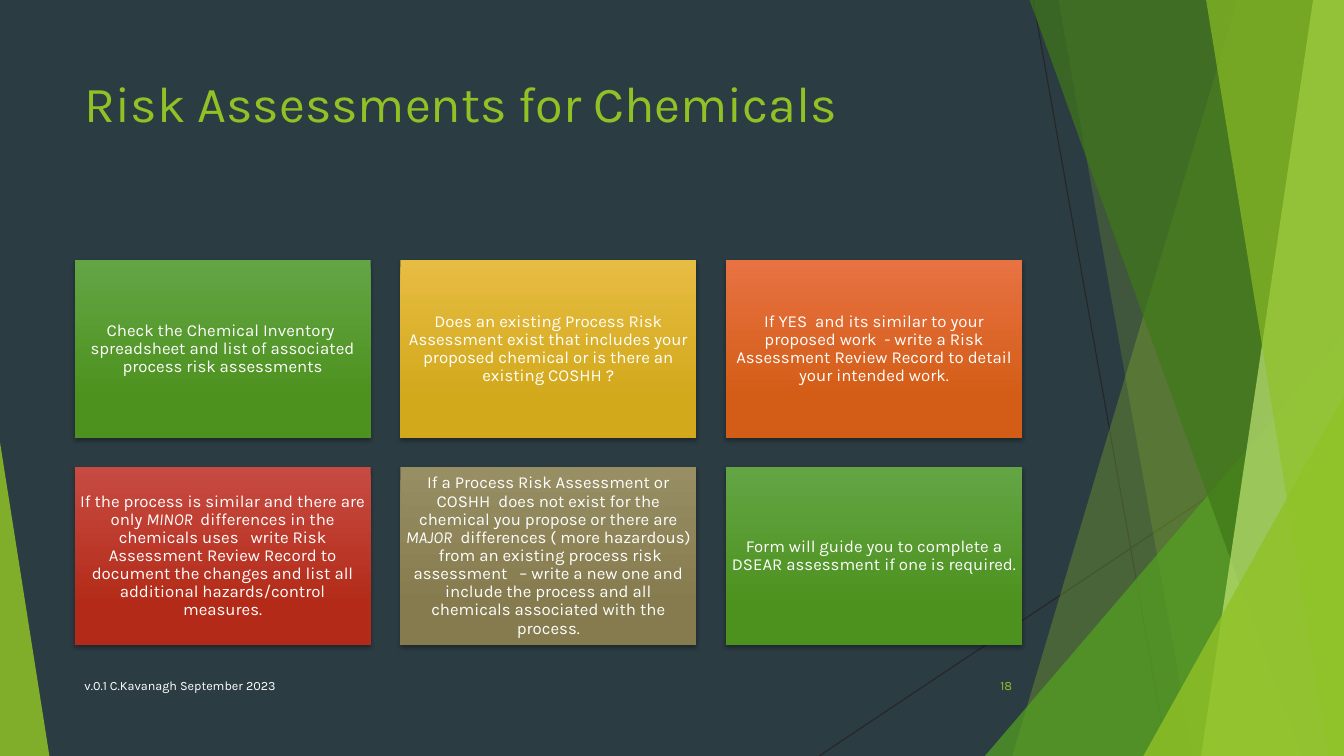
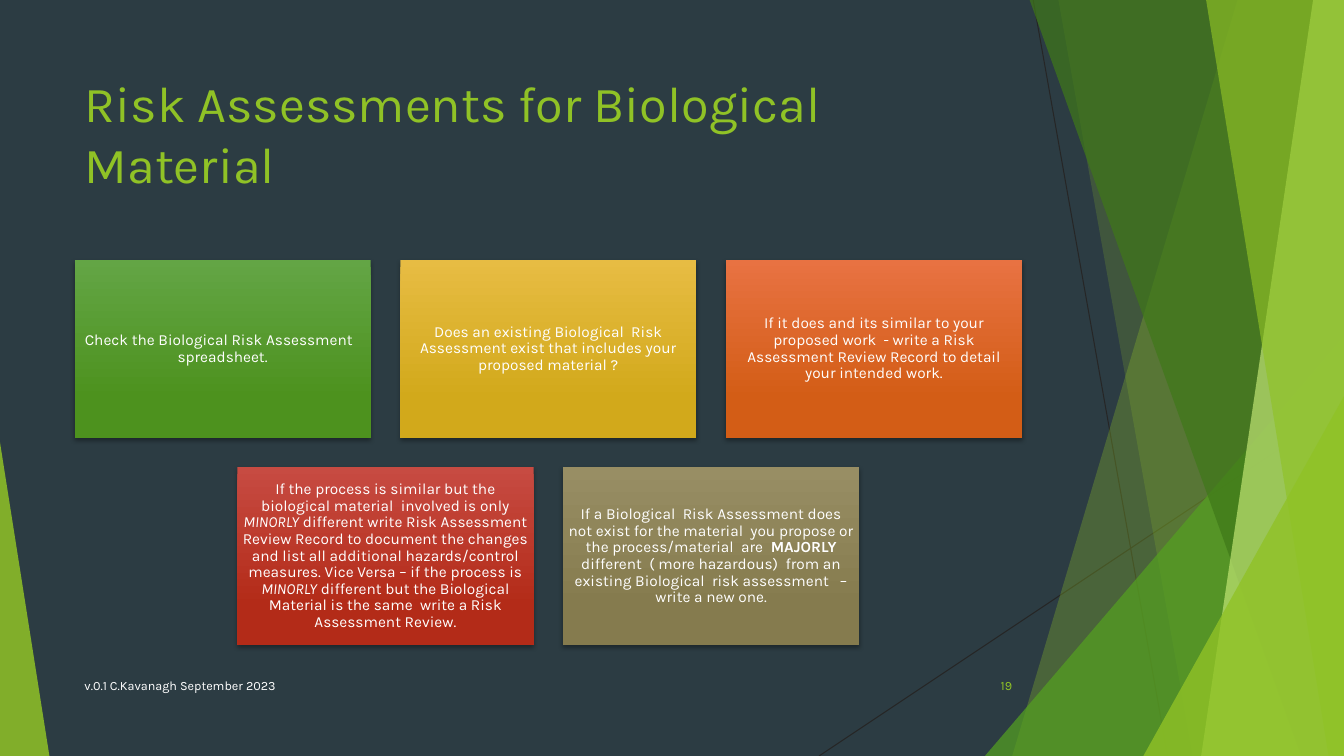
from dataclasses import dataclass

from lxml import etree
from pptx import Presentation
from pptx.dml.color import RGBColor
from pptx.enum.shapes import MSO_CONNECTOR, MSO_SHAPE
from pptx.enum.text import MSO_ANCHOR, MSO_AUTO_SIZE, PP_ALIGN
from pptx.oxml.ns import qn
from pptx.util import Pt

STRAIGHT = MSO_CONNECTOR.STRAIGHT
RECT = MSO_SHAPE.RECTANGLE
TRIANGLE = MSO_SHAPE.ISOSCELES_TRIANGLE
TOP, MIDDLE = MSO_ANCHOR.TOP, MSO_ANCHOR.MIDDLE
LEFT, CENTER, RIGHT = PP_ALIGN.LEFT, PP_ALIGN.CENTER, PP_ALIGN.RIGHT
NO_FIT = MSO_AUTO_SIZE.NONE
TITLE_ONLY = 5
W, H = 960, 540


@dataclass(frozen=True)
class Theme:
    font: str = "Karla"
    background: str = "2C3C43"
    accent: str = "90C226"
    text: str = "FFFFFF"
    hairline: str = "262626"
    green: str = "54A021"
    dark_green: str = "3F7819"
    pale_green: str = "C0E474"
    shadow: str = "000000"
    title_size: float = 36
    footer_size: float = 9
    cards: tuple[tuple[str, str], ...] = (
        ("63A545", "4D921E"),
        ("E7BC43", "D2A91B"),
        ("E87242", "D35D16"),
        ("C74B42", "B32B18"),
        ("988E64", "857B4E"),
    )


THEME = Theme()


@dataclass(frozen=True)
class Box:
    x: float
    y: float
    w: float
    h: float

    def emu(self) -> tuple[Pt, Pt, Pt, Pt]:
        return Pt(self.x), Pt(self.y), Pt(self.w), Pt(self.h)


@dataclass(frozen=True)
class Run:
    text: str
    italic: bool = False
    bold: bool = False


@dataclass(frozen=True)
class Hairline:
    x1: float
    y1: float
    x2: float
    y2: float


@dataclass(frozen=True)
class Band:
    top_x: float
    bottom_x: float
    color: str
    alpha: int


@dataclass(frozen=True)
class Corner:
    box: Box
    apex: float
    color: str
    alpha: int


@dataclass(frozen=True)
class Page:
    title: str
    number: int
    size: float
    cards: tuple[tuple[Run, ...], ...]


TITLE = Box(53.3, 48, 676.8, 104)
FOOTER = Box(53.3, 475.6, 496, 28.8)
NUMBER = Box(676.1, 475.6, 54, 28.8)
GRID_TOP, COLUMNS = 185.7, 3
CARD_W, CARD_H, GAP = 211.5, 126.9, 21.15
FOOTER_TEXT = "v.0.1 C.Kavanagh September 2023"

DECOR = (
    Hairline(738, 0, 834, H),
    Hairline(W, 290, 585, H),
    Band(884, 723, THEME.accent, 30),
    Band(756, 852, THEME.accent, 20),
    Corner(Box(703.5, 240, 256.5, 300), 1, THEME.green, 72),
    Band(735.5, 929.5, THEME.dark_green, 70),
    Band(938, 858, THEME.pale_green, 70),
    Band(861.5, 949, THEME.accent, 65),
    Corner(Box(816.7, 283, 143.3, 257), 1, THEME.accent, 80),
    Corner(Box(0, 316, 35.3, 224), 0, THEME.accent, 85),
)

PAGES = (
    Page("Risk Assessments for Chemicals", 18, 12, (
        (Run("Check the Chemical Inventory  spreadsheet and list of associated process risk assessments"),),
        (Run("Does an existing Process Risk Assessment exist that includes your proposed chemical "
             "or is there an existing COSHH ?"),),
        (Run("If YES  and its similar to your proposed work  - write a Risk Assessment Review Record "
             "to detail your intended work."),),
        (Run("If the process is similar and there are only "),
         Run("MINOR ", italic=True),
         Run(" differences in the chemicals uses   write Risk Assessment Review Record to document "
             "the changes and list all additional hazards/control measures.")),
        (Run("If a Process Risk Assessment or COSHH  does not exist for the chemical you propose "
             "or there are "),
         Run("MAJOR", italic=True),
         Run("  differences ( more hazardous)  from an existing process risk assessment   – write a "
             "new one and include the process and all chemicals associated with the process.")),
        (Run("Form will guide you to complete a DSEAR assessment if one is required."),),
    )),
    Page("Risk Assessments for Biological Material", 19, 11, (
        (Run("Check the Biological Risk Assessment   spreadsheet."),),
        (Run("Does an existing Biological  Risk Assessment exist that includes your proposed material ?"),),
        (Run("If it does and its similar to your proposed work  - write a Risk Assessment Review Record "
             "to detail your intended work."),),
        (Run("If the process is similar but the biological material  involved is only "),
         Run("MINORLY", italic=True),
         Run(" different write Risk Assessment Review Record to document the changes and list all "
             "additional hazards/control measures. Vice Versa – if the process is "),
         Run("MINORLY", italic=True),
         Run(" different but the Biological Material is the same  write a Risk Assessment Review.")),
        (Run("If a Biological  Risk Assessment does not exist for the material  you propose or the "
             "process/material  are  "),
         Run("MAJORLY", bold=True),
         Run(" different  ( more hazardous)  from an existing Biological  risk assessment   – write a new one.")),
    )),
)


def rgb(color: str) -> RGBColor:
    return RGBColor.from_string(color)


def write(shape, runs: tuple[Run, ...], size: float, color: str, align=LEFT, anchor=MIDDLE,
          inset: tuple[float, float] = (7.2, 3.6), after: float = 0, spacing: float = 1.0) -> None:
    tf = shape.text_frame
    tf.word_wrap = True
    tf.auto_size = NO_FIT
    tf.vertical_anchor = anchor
    tf.margin_left = tf.margin_right = Pt(inset[0])
    tf.margin_top = tf.margin_bottom = Pt(inset[1])
    p = tf.paragraphs[0]
    p.alignment = align
    p.space_before = Pt(0)
    p.space_after = Pt(after)
    p.line_spacing = spacing
    for run in runs:
        r = p.add_run()
        r.text = run.text
        r.font.name = THEME.font
        r.font.size = Pt(size)
        r.font.bold = run.bold
        r.font.italic = run.italic
        r.font.color.rgb = rgb(color)


def fill_clear(shape, color: str, alpha: int) -> None:
    shape.shadow.inherit = False
    shape.line.fill.background()
    shape.fill.solid()
    shape.fill.fore_color.rgb = rgb(color)
    clr = shape.element.spPr.find(qn("a:solidFill"))[0]
    etree.SubElement(clr, qn("a:alpha"), val=str(alpha * 1000))


def add_hairline(s, line: Hairline):
    cx = s.shapes.add_connector(STRAIGHT, Pt(line.x1), Pt(line.y1), Pt(line.x2), Pt(line.y2))
    cx.line.color.rgb = rgb(THEME.hairline)
    cx.line.width = Pt(0.75)
    etree.SubElement(cx.element.spPr, qn("a:effectLst"))
    return cx


def add_band(s, band: Band):
    builder = s.shapes.build_freeform(Pt(band.top_x), Pt(0))
    builder.add_line_segments([(Pt(W), Pt(0)), (Pt(W), Pt(H)), (Pt(band.bottom_x), Pt(H))], close=True)
    sp = builder.convert_to_shape()
    fill_clear(sp, band.color, band.alpha)
    return sp


def add_corner(s, corner: Corner):
    sp = s.shapes.add_shape(TRIANGLE, *corner.box.emu())
    sp.adjustments[0] = corner.apex
    fill_clear(sp, corner.color, corner.alpha)
    return sp


ADD_DECOR = {Hairline: add_hairline, Band: add_band, Corner: add_corner}


def decorate(layout, s) -> None:
    tree = layout.shapes.element
    for ph in list(layout.placeholders)[1:]:
        tree.remove(ph.element)
    layout.background.fill.solid()
    layout.background.fill.fore_color.rgb = rgb(THEME.background)
    for item in DECOR:
        tree.append(ADD_DECOR[type(item)](s, item).element)


def add_card(s, box: Box, runs: tuple[Run, ...], size: float, colors: tuple[str, str]) -> None:
    sp = s.shapes.add_shape(RECT, *box.emu())
    sp.line.fill.background()
    sp.fill.gradient()
    sp.fill.gradient_angle = 270
    for stop, color, position in zip(sp.fill.gradient_stops, colors, (0, 0.78)):
        stop.color.rgb = rgb(color)
        stop.position = position
    sp.shadow.inherit = False
    effects = sp.element.spPr.find(qn("a:effectLst"))
    shadow = etree.SubElement(effects, qn("a:outerShdw"), blurRad=str(Pt(3)), dist=str(Pt(2)),
                              dir="5400000", algn="ctr", rotWithShape="0")
    clr = etree.SubElement(shadow, qn("a:srgbClr"), val=THEME.shadow)
    etree.SubElement(clr, qn("a:alpha"), val="35000")
    write(sp, runs, size, THEME.text, CENTER, inset=(3.6, 3.6), after=round(0.35 * size, 1), spacing=0.9)


def add_cards(s, page: Page) -> None:
    for i, runs in enumerate(page.cards):
        row, col = divmod(i, COLUMNS)
        in_row = min(COLUMNS, len(page.cards) - row * COLUMNS)
        indent = (COLUMNS - in_row) * (CARD_W + GAP) / 2
        box = Box(TITLE.x + indent + col * (CARD_W + GAP), GRID_TOP + row * (CARD_H + GAP), CARD_W, CARD_H)
        add_card(s, box, runs, page.size, THEME.cards[i % len(THEME.cards)])


def add_label(s, box: Box, text: str, color: str, align) -> None:
    tb = s.shapes.add_textbox(*box.emu())
    write(tb, (Run(text),), THEME.footer_size, color, align, after=6)


def fill_page(s, page: Page) -> None:
    title = s.shapes.title
    title.left, title.top, title.width, title.height = TITLE.emu()
    write(title, (Run(page.title),), THEME.title_size, THEME.accent, anchor=TOP)
    add_label(s, FOOTER, FOOTER_TEXT, THEME.text, LEFT)
    add_label(s, NUMBER, str(page.number), THEME.accent, RIGHT)
    add_cards(s, page)


def main() -> None:
    prs = Presentation()
    prs.slide_width, prs.slide_height = Pt(W), Pt(H)
    layout = prs.slide_layouts[TITLE_ONLY]
    slides = [prs.slides.add_slide(layout) for _ in PAGES]
    decorate(layout, slides[0])
    for s, page in zip(slides, PAGES):
        fill_page(s, page)
    prs.save("out.pptx")


if __name__ == "__main__":
    main()
